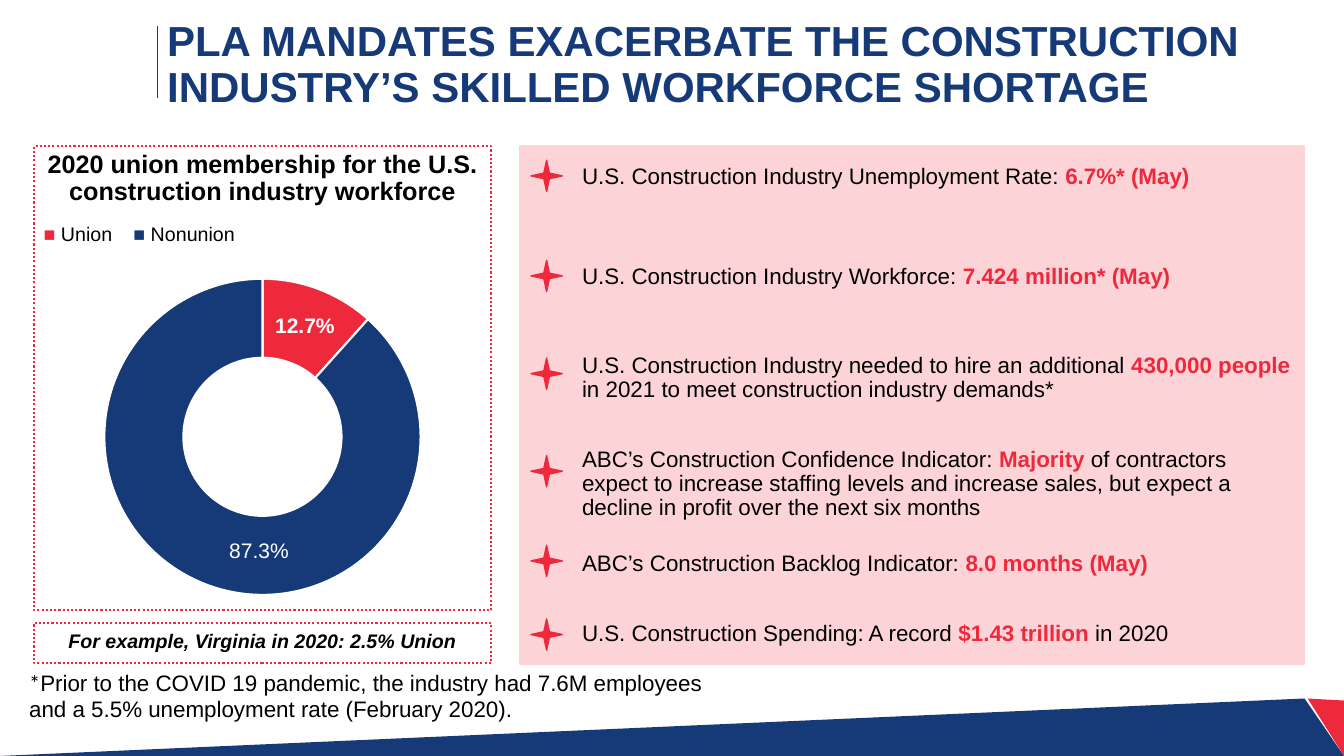
from dataclasses import dataclass

from lxml.etree import SubElement
from pptx import Presentation
from pptx.chart.data import CategoryChartData
from pptx.dml.color import RGBColor
from pptx.enum.chart import XL_CHART_TYPE
from pptx.enum.dml import MSO_LINE
from pptx.enum.shapes import MSO_CONNECTOR, MSO_SHAPE
from pptx.enum.text import MSO_ANCHOR, PP_ALIGN
from pptx.oxml.ns import qn
from pptx.util import Inches, Pt

SLIDE_W, SLIDE_H = Inches(13.33), Inches(7.5)


@dataclass(frozen=True)
class Theme:
    """Colours, fonts and type sizes of the slide."""
    navy: RGBColor = RGBColor.from_string("163A78")
    red: RGBColor = RGBColor.from_string("EE293C")
    pink: RGBColor = RGBColor.from_string("FCD4D8")
    black: RGBColor = RGBColor.from_string("000000")
    white: RGBColor = RGBColor.from_string("FFFFFF")
    font: str = "Arial"
    mark_font: str = "Calibri"
    title: int = 30
    heading: int = 18
    body: int = 16
    label: int = 15
    small: int = 14


THEME = Theme()
PANEL_TOP = 19.37
LEFT_COLUMN, LEFT_WIDTH = 2.51, 34.04
FACT_COLUMN, FACT_WIDTH = 42.57, 54.46
STAR_COLUMN, STAR_SIZE = 39.51, Inches(0.31)

FACTS = [
    (21.17, 7.87, 21.2, ["U.S. Construction Industry Unemployment Rate: ", "6.7%* (May)"]),
    (34.47, 11.07, 34.43, ["U.S. Construction Industry Workforce: ", "7.424 million* (May)"]),
    (46.2, 7.87, 47.36, ["U.S. Construction Industry needed to hire an additional ",
                         "430,000 people ", "in 2021 to meet construction industry demands*"]),
    (58.62, 11.07, 60.27, ["ABC’s Construction Confidence Indicator: ", "Majority",
                           " of contractors expect to increase staffing levels and increase "
                           "sales, but expect a decline in profit over the next six months"]),
    (72.4, 4.53, 72.13, ["ABC’s Construction Backlog Indicator: ", "8.0 months (May)"]),
    (81.6, 4.53, 81.87, ["U.S. Construction Spending: A record ", "$1.43 trillion ", "in 2020"]),
]
MEMBERSHIP = [("1", 0.128, "12.7%", THEME.red, True, None),
              ("2", 0.972, "87.3%", THEME.navy, False, (0.08, 0.01))]


def across(share):
    """Turn a percentage of the slide width into a length."""
    return round(SLIDE_W * share / 100)


def down(share):
    """Turn a percentage of the slide height into a length."""
    return round(SLIDE_H * share / 100)


def area(left, top, width, height):
    """Turn percentages of the slide into a position and size."""
    return across(left), down(top), across(width), down(height)


def style_font(font, size, color=THEME.black, bold=False, italic=False, name=THEME.font):
    """Set the typeface, size, colour and weight of a font."""
    font.name, font.size = name, Pt(size)
    font.bold, font.italic = bold, italic
    font.color.rgb = color


def add_text(slide, place, runs, size, align=PP_ALIGN.LEFT, anchor=MSO_ANCHOR.TOP,
             spacing=0.9, tab=None):
    """Add a wrapped paragraph made of (text, style) runs."""
    frame = slide.shapes.add_textbox(*place).text_frame
    frame.word_wrap, frame.vertical_anchor = True, anchor
    paragraph = frame.paragraphs[0]
    if tab:
        stops = SubElement(paragraph._p.get_or_add_pPr(), qn("a:tabLst"))
        SubElement(stops, qn("a:tab"), pos=str(tab), algn="l")
    paragraph.alignment, paragraph.line_spacing = align, spacing
    for text, style in runs:
        run = paragraph.add_run()
        run.text = text
        style_font(run.font, size, **style)


def add_block(slide, kind, place, color, weight, filled=True):
    """Add a filled shape, or a dotted outline when it is not filled."""
    block = slide.shapes.add_shape(kind, *place)
    block.shadow.inherit = False
    block.line.color.rgb, block.line.width = color, Pt(weight)
    if filled:
        block.fill.solid()
        block.fill.fore_color.rgb = color
    else:
        block.fill.background()
        block.line.dash_style = MSO_LINE.ROUND_DOT


def add_wedge(slide, corners, color):
    """Add a footer polygon from corners in percentages of the slide."""
    start, *others = [(across(x), down(y)) for x, y in corners]
    builder = slide.shapes.build_freeform(*start)
    builder.add_line_segments(others, close=True)
    wedge = builder.convert_to_shape()
    wedge.shadow.inherit = False
    wedge.fill.solid()
    wedge.fill.fore_color.rgb = color
    wedge.line.fill.background()


def add_title_rule(slide):
    """Add the thin vertical line beside the title."""
    x = across(11.7)
    rule = slide.shapes.add_connector(MSO_CONNECTOR.STRAIGHT, x, down(3.47), x, down(12.93))
    rule.line.color.rgb, rule.line.width = THEME.navy, Pt(0.5)
    SubElement(rule._element.spPr, qn("a:effectLst"))


def shift_label(label, shift):
    """Move a data label by shares of the chart's width and height."""
    element = label._get_or_add_dLbl()
    layout = element.makeelement(qn("c:layout"))
    manual = SubElement(layout, qn("c:manualLayout"))
    for axis, share in zip("xy", shift):
        SubElement(manual, qn(f"c:{axis}"), val=str(share))
    element.find(qn("c:idx")).addnext(layout)


def add_membership_chart(slide, place):
    """Add the doughnut of union and nonunion shares."""
    shares = CategoryChartData(number_format="0.00%")
    shares.categories = [row[0] for row in MEMBERSHIP]
    shares.add_series("Series 1", [row[1] for row in MEMBERSHIP])
    chart = slide.shapes.add_chart(XL_CHART_TYPE.DOUGHNUT, *place, shares).chart
    chart.has_legend = chart.has_title = False
    chart.font.name, chart.font.size = THEME.mark_font, Pt(10)
    chart.font.color.rgb = THEME.black
    plot = chart.plots[0]
    plot.vary_by_categories = True
    plot._element.find(qn("c:holeSize")).set("val", "59")
    labels = plot.series[0].data_labels
    labels.show_value, labels.show_percentage = True, False
    labels.number_format, labels.number_format_is_linked = "0.00%", False
    style_font(labels.font, THEME.label, bold=True)
    for index, (_, _, caption, color, bold, shift) in enumerate(MEMBERSHIP):
        point = plot.series[0].points[index]
        point.format.fill.solid()
        point.format.fill.fore_color.rgb = color
        point.format.line.color.rgb = THEME.white
        point.format.line.width = Pt(1.5)
        run = point.data_label.text_frame.paragraphs[0].add_run()
        run.text = caption
        style_font(run.font, THEME.label, THEME.white, bold)
        if shift:
            shift_label(point.data_label, shift)


def add_fact(slide, top, height, star_top, parts):
    """Add one starred fact whose second part is highlighted."""
    accent = {"color": THEME.red, "bold": True}
    runs = [(part, accent if index == 1 else {}) for index, part in enumerate(parts)]
    add_text(slide, area(FACT_COLUMN, top, FACT_WIDTH, height), runs, THEME.body)
    star = (across(STAR_COLUMN), down(star_top), STAR_SIZE, STAR_SIZE)
    add_block(slide, MSO_SHAPE.STAR_4_POINT, star, THEME.red, 1)


def main():
    """Build the slide and save it."""
    deck = Presentation()
    deck.slide_width, deck.slide_height = SLIDE_W, SLIDE_H
    slide = deck.slides.add_slide(deck.slide_layouts[6])
    add_title_rule(slide)
    add_wedge(slide, [(0, 100), (97.07, 92.4), (100, 100)], THEME.navy)
    add_wedge(slide, [(97.3, 92.4), (100, 92.67), (100, 100)], THEME.red)
    add_text(slide, area(11.7, 4.2, 83.87, 9.07),
             [("PLA MANDATES EXACERBATE THE CONSTRUCTION INDUSTRY’S SKILLED WORKFORCE SHORTAGE",
               {"color": THEME.navy, "bold": True})], THEME.title, anchor=MSO_ANCHOR.MIDDLE)

    add_block(slide, MSO_SHAPE.RECTANGLE, area(38.69, PANEL_TOP, 58.33, 68.43), THEME.pink, 1.5)
    add_membership_chart(slide, area(1.45, 34.85, 36.16, 45.87))
    add_text(slide, area(LEFT_COLUMN, PANEL_TOP, LEFT_WIDTH, 8.67),
             [("2020 union membership for the U.S. construction industry workforce",
               {"bold": True})], THEME.heading, PP_ALIGN.CENTER)
    add_text(slide, area(LEFT_COLUMN, 29.07, 36.16, 4.13),
             [("■", {"color": THEME.red}), (" Union \t", {}),
              ("■", {"color": THEME.navy}), (" Nonunion", {})], THEME.small, tab=Inches(0.89))
    add_text(slide, area(LEFT_COLUMN, 82.87, LEFT_WIDTH, 4.13),
             [("For example, Virginia in 2020: 2.5% Union", {"bold": True, "italic": True})],
             THEME.small, PP_ALIGN.CENTER)
    for top, height in ((PANEL_TOP, 61.33), (82.44, 5.25)):
        add_block(slide, MSO_SHAPE.RECTANGLE, area(LEFT_COLUMN, top, LEFT_WIDTH, height),
                  THEME.red, 1.5, filled=False)

    for fact in FACTS:
        add_fact(slide, *fact)
    add_text(slide, area(1.43, 87.8, 54.24, 8.53),
             [("*", {"name": THEME.mark_font}),
              ("Prior to the COVID 19 pandemic, the industry had 7.6M employees "
               "and a 5.5% unemployment rate (February 2020).", {})], THEME.body, spacing=1.0)
    deck.save("out.pptx")


if __name__ == "__main__":
    main()
